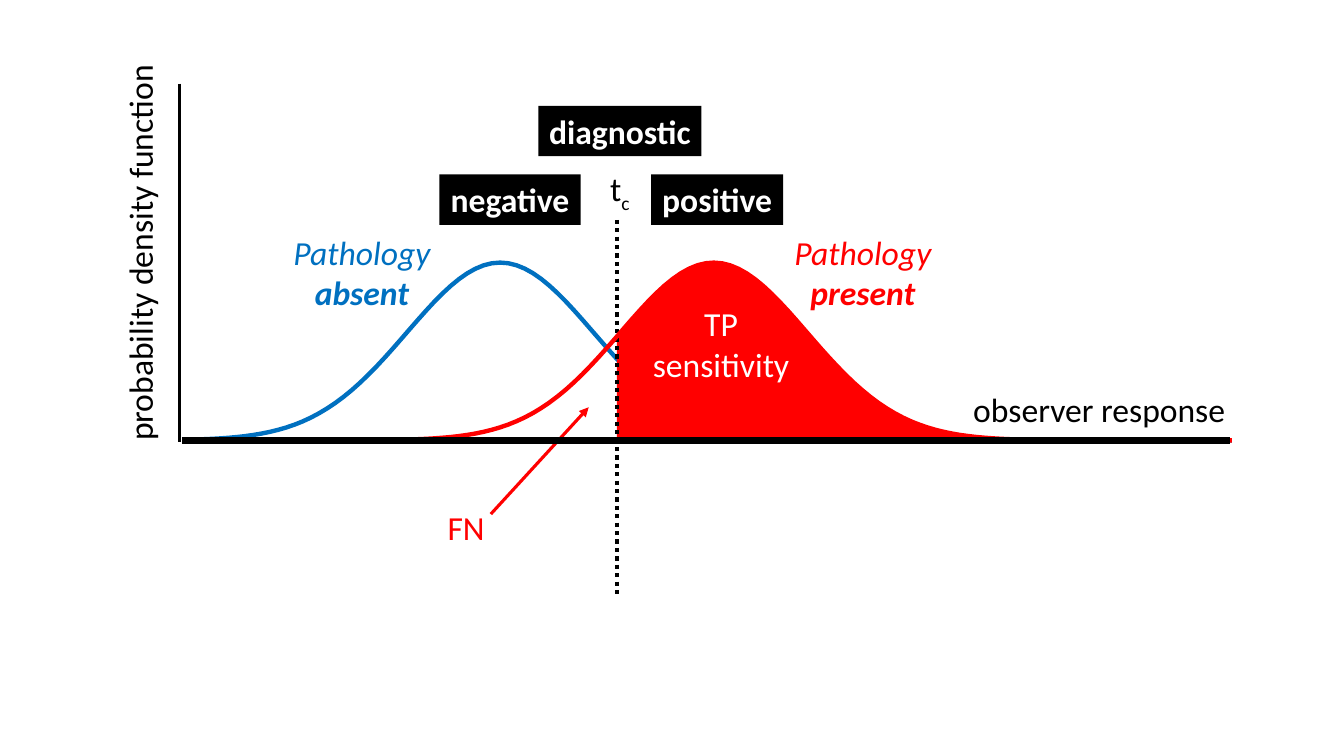
import math

import pptx
import pptx.dml.color
import pptx.enum.dml
import pptx.enum.text
import pptx.oxml
import pptx.oxml.ns
import pptx.util

Pt = pptx.util.Pt
RGBColor = pptx.dml.color.RGBColor
BLACK = RGBColor(0x00, 0x00, 0x00)
WHITE = RGBColor(0xFF, 0xFF, 0xFF)
RED = RGBColor(0xFF, 0x00, 0x00)
BLUE = RGBColor(0x00, 0x70, 0xC0)

# Lengths in points
BASELINE = 314.6
CURVE_HEIGHT = 127
CURVE_SPREAD = 66.7
ABSENT_MEAN = 357.3
PRESENT_MEAN = 509.8
CURVE_LEFT, CURVE_RIGHT = 134, 880
THRESHOLD = 440.6
LINE_HEIGHT = 36
PAIR_HEIGHT = 65.5


def bell(mean, left, right, steps=127):
    """Points of a normal curve standing on the baseline."""
    points = []
    for step in range(steps + 1):
        x = left + (right - left) * step / steps
        density = math.exp(-((x - mean) / CURVE_SPREAD) ** 2 / 2)
        points.append((x, BASELINE - CURVE_HEIGHT * density))
    return points


class DiagramSlide:
    font_name = "Calibri"
    font_size = 24

    def __init__(self, deck):
        self.slide = deck.slides.add_slide(deck.slide_layouts[6])

    def outline(self, points, line=None, fill=None):
        """An open stroked curve, or a closed filled area."""
        start, *rest = [(Pt(x), Pt(y)) for x, y in points]
        builder = self.slide.shapes.build_freeform(*start, scale=1.0)
        builder.add_line_segments(rest, close=fill is not None)
        shape = builder.convert_to_shape()
        shape.shadow.inherit = False
        if fill is None:
            shape.fill.background()
            shape.line.color.rgb = line
            shape.line.width = Pt(3.13)
        else:
            shape.fill.solid()
            shape.fill.fore_color.rgb = fill
            shape.line.fill.background()

    def line(self, start, end, color, width, dash=None, arrow=False):
        connector = self.slide.shapes.add_connector(
            pptx.enum.shapes.MSO_CONNECTOR.STRAIGHT,
            *[Pt(value) for value in start + end])
        connector.line.color.rgb = color
        connector.line.width = Pt(width)
        if dash is not None:
            connector.line.dash_style = dash
        properties = connector._element.spPr
        if arrow:
            head = pptx.oxml.parse_xml(
                f'<a:tailEnd {pptx.oxml.ns.nsdecls("a")} type="triangle"/>')
            connector.line._get_or_add_ln().append(head)
        properties.append(pptx.oxml.parse_xml(
            f'<a:effectLst {pptx.oxml.ns.nsdecls("a")}/>'))

    def text(self, place, paragraphs, color, fill=None, rotation=0):
        """Each paragraph is a list of (text, format values) spans."""
        box = self.slide.shapes.add_textbox(*[Pt(value) for value in place])
        box.rotation = rotation
        if fill is not None:
            box.fill.solid()
            box.fill.fore_color.rgb = fill
        frame = box.text_frame
        frame.word_wrap = False
        frame.auto_size = pptx.enum.text.MSO_AUTO_SIZE.SHAPE_TO_FIT_TEXT
        for index, spans in enumerate(paragraphs):
            para = frame.add_paragraph() if index else frame.paragraphs[0]
            para.alignment = pptx.enum.text.PP_ALIGN.CENTER
            for words, extra in spans:
                span = para.add_run()
                span.text = words
                values = {"name": self.font_name, "size": Pt(self.font_size), **extra}
                baseline = values.pop("baseline", None)
                for name, value in values.items():
                    setattr(span.font, name, value)
                span.font.color.rgb = color
                if baseline is not None:
                    span._r.get_or_add_rPr().set("baseline", str(baseline))

    def label(self, left, top, width, words, color=BLACK, rotation=0):
        self.text((left, top, width, LINE_HEIGHT), [[(words, {})]], color,
                  rotation=rotation)

    def tag(self, left, top, width, words):
        self.text((left, top, width, LINE_HEIGHT), [[(words, {"bold": True})]],
                  WHITE, fill=BLACK)

    def pathology(self, left, state, color):
        self.text((left, 162, 113.8, PAIR_HEIGHT),
                  [[("Pathology", {"italic": True})],
                   [(state, {"italic": True, "bold": True})]], color)


def main():
    deck = pptx.Presentation()
    deck.slide_width, deck.slide_height = Pt(960), Pt(540)
    diagram = DiagramSlide(deck)

    # Absent curve and true positive area
    diagram.outline(bell(ABSENT_MEAN, CURVE_LEFT, CURVE_RIGHT), line=BLUE)
    area_right = 698
    area = bell(PRESENT_MEAN, THRESHOLD, area_right, 60)
    diagram.outline(area + [(area_right, BASELINE), (THRESHOLD, BASELINE)], fill=RED)
    diagram.text((458.6, 213.1, 113, PAIR_HEIGHT),
                 [[("TP", {})], [("sensitivity", {})]], WHITE)

    # Threshold and decisions
    diagram.label(312.5, 358.6, 41, "FN", RED)
    diagram.line((THRESHOLD, 157), (THRESHOLD, 427), BLACK, 3,
                 dash=pptx.enum.dml.MSO_LINE.ROUND_DOT)
    diagram.tag(313.9, 124.6, 100.8, "negative")
    diagram.tag(465.1, 124.6, 94.3, "positive")
    diagram.line((350.6, 367.2), (420.5, 290.9), RED, 2.25, arrow=True)
    diagram.label(686.9, 274.3, 196.6, "observer response")
    diagram.text((428.4, 116.6, 28.8, LINE_HEIGHT),
                 [[("t", {}), ("c", {"baseline": -25000})]], BLACK)
    diagram.tag(384.5, 75.6, 116.6, "diagnostic")

    # Present curve and population names
    diagram.pathology(201.6, "absent", BLUE)
    diagram.outline(bell(PRESENT_MEAN, CURVE_LEFT, CURVE_RIGHT), line=RED)
    diagram.pathology(559.4, "present", RED)

    # Axes
    diagram.line((130.3, BASELINE), (878.4, BASELINE), BLACK, 4.5)
    diagram.label(-43.2, 162.7, 285.8, "probability density function", rotation=270)
    diagram.line((128.2, 59.8), (128.2, 315.4), BLACK, 1.63)

    deck.save("out.pptx")


if __name__ == "__main__":
    main()
